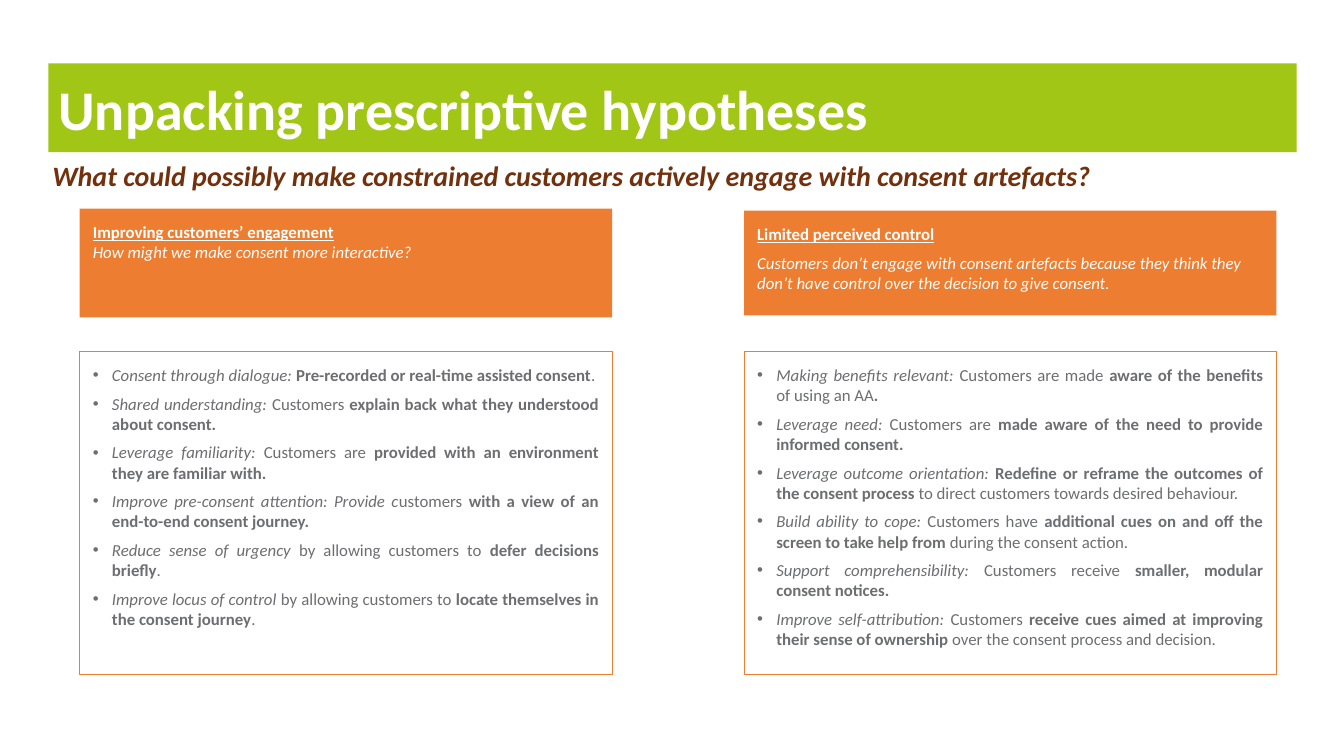
import pptx
import pptx.dml.color
import pptx.enum.text
import pptx.oxml
import pptx.oxml.ns
import pptx.util

COLORS = {"green": "A2C616", "orange": "ED7D31", "grey": "6D6E71", "brown": "72310C", "white": "FFFFFF"}
FONT = "Calibri"
WIDTH, HEIGHT = pptx.util.Inches(13.33), pptx.util.Inches(7.5)
COLUMNS = (5.93, 55.36)
COLUMN_WIDTH = 39.61
ALIGN = pptx.enum.text.PP_ALIGN
ANCHOR = pptx.enum.text.MSO_ANCHOR

ENGAGEMENT = [
    [("Consent through dialogue: ", "i"), ("Pre-recorded or real-time assisted consent", "b"), (".", "")],
    [("Shared understanding: ", "i"), ("Customers ", ""),
     ("explain back what they understood about consent.", "b")],
    [("Leverage familiarity: ", "i"), ("Customers are ", ""),
     ("provided with an environment they are familiar with.", "b")],
    [("Improve pre-consent attention: Provide c", "i"), ("ustomers ", ""),
     ("with a view of an end-to-end consent journey.", "b")],
    [("Reduce sense of urgency ", "i"), ("by allowing customers to ", ""),
     ("defer decisions briefly", "b"), (".", "")],
    [("Improve locus of control ", "i"), ("by allowing customers to ", ""),
     ("locate themselves in the consent journey", "b"), (".", "")],
]
CONTROL = [
    [("Making benefits relevant: ", "i"), ("Customers are made ", ""), ("aware of the benefits", "b"),
     (" of using an AA", ""), (".", "bi")],
    [("Leverage need: ", "i"), ("Customers are ", ""),
     ("made aware of the need to provide informed consent.", "b")],
    [("Leverage outcome orientation: ", "i"),
     ("Redefine or reframe the outcomes of the consent process", "b"),
     (" to direct customers towards desired behaviour.", "")],
    [("Build ability to cope: ", "i"), ("Customers have ", ""),
     ("additional cues on and off the screen to take help from", "b"),
     (" during the consent action.", "")],
    [("Support comprehensibility: ", "i"), ("Customers receive ", ""),
     ("smaller, modular consent notices.", "b")],
    [("Improve self-attribution: ", "i"), ("Customers ", ""),
     ("receive cues aimed at improving their sense of ownership", "b"),
     (" over the consent process and decision.", "")],
]
ENGAGEMENT_HEAD = [
    [("Improving customers’ engagement", "bu")],
    [("How might we make consent more interactive?", "i")],
]
CONTROL_HEAD = [
    [("Limited perceived control", "bu")],
    [("Customers don’t engage with consent artefacts because they think they "
      "don’t have control over the decision to give consent.", "i")],
]


def rgb(name):
    """Return the named palette colour."""
    return pptx.dml.color.RGBColor.from_string(COLORS[name])


def area(left, top, width, height):
    """Turn percentages of the slide into lengths."""
    return [int(side * share / 100) for side, share in
            ((WIDTH, left), (HEIGHT, top), (WIDTH, width), (HEIGHT, height))]


def place(sp, box, fill=None, line=None):
    """Position a placeholder and set its fill and outline."""
    sp.left, sp.top, sp.width, sp.height = area(*box)
    if fill:
        sp.fill.solid()
        sp.fill.fore_color.rgb = rgb(fill)
    if line:
        sp.line.color.rgb = rgb(line)
        sp.line.width = pptx.util.Pt(0.75)


def add_bullet(p):
    """Give a paragraph a hanging grey bullet."""
    pPr = p._p.get_or_add_pPr()
    pPr.set("marL", str(pptx.util.Inches(0.19)))
    pPr.set("indent", str(-pptx.util.Inches(0.19)))
    ns = pptx.oxml.ns.nsdecls("a")
    for xml in (f'<a:buClr {ns}><a:srgbClr val="{COLORS["grey"]}"/></a:buClr>',
                f'<a:buFont {ns} typeface="Arial"/>', f'<a:buChar {ns} char="•"/>'):
        pPr.append(pptx.oxml.parse_xml(xml))


def write(sp, paragraphs, size, color, inset=0.1, align=ALIGN.LEFT, anchor=ANCHOR.TOP,
          after=0, spacing=1.0, bullets=False):
    """Fill a shape with styled paragraphs, run by run."""
    tf = sp.text_frame
    tf.word_wrap = True
    tf.auto_size = pptx.enum.text.MSO_AUTO_SIZE.NONE
    tf.vertical_anchor = anchor
    tf.margin_left = tf.margin_right = tf.margin_top = tf.margin_bottom = pptx.util.Inches(inset)
    for i, runs in enumerate(paragraphs):
        p = tf.add_paragraph() if i else tf.paragraphs[0]
        if bullets:
            add_bullet(p)
        p.alignment = align
        p.line_spacing = spacing
        p.space_before = pptx.util.Pt(0)
        p.space_after = pptx.util.Pt(after)
        for text, style in runs:
            r = p.add_run()
            r.text = text
            r.font.name = FONT
            r.font.size = pptx.util.Pt(size)
            r.font.color.rgb = rgb(color)
            r.font.bold = "b" in style
            r.font.italic = "i" in style
            r.font.underline = "u" in style


def add_title(s):
    """Format the title as a green banner."""
    place(s.shapes.title, (3.6, 8.4, 92.87, 11.73), fill="green")
    write(s.shapes.title, [[("Unpacking prescriptive hypotheses", "b")]], 40, "white",
          anchor=ANCHOR.MIDDLE)


def add_question(s):
    """Add the guiding question under the banner."""
    sp = s.shapes.add_textbox(*area(3.15, 20.53, 92.2, 6.27))
    text = "What could possibly make constrained customers actively engage with consent artefacts?"
    write(sp, [[(text, "bi")]], 20, "brown", spacing=0.8)


def add_heading(sp, left, top, height, paragraphs, align, after):
    """Format a column heading as an orange block."""
    place(sp, (left, top, COLUMN_WIDTH, height), fill="orange")
    write(sp, paragraphs, 12, "white", inset=0.13, align=align, after=after)


def add_list(sp, left, items):
    """Format a column body as an outlined bullet list."""
    place(sp, (left, 46.53, COLUMN_WIDTH, 42.67), line="orange")
    write(sp, items, 12, "grey", inset=0.13, align=ALIGN.JUSTIFY, after=6, bullets=True)


def main():
    """Build and save the slide."""
    prs = pptx.Presentation()
    prs.slide_width, prs.slide_height = WIDTH, HEIGHT
    s = prs.slides.add_slide(prs.slide_layouts.get_by_name("Comparison"))
    left_head, left_list, right_head, right_list = list(s.placeholders)[1:5]
    add_title(s)
    add_heading(left_head, COLUMNS[0], 27.6, 14.4, ENGAGEMENT_HEAD, ALIGN.JUSTIFY, 0)
    add_heading(right_head, COLUMNS[1], 27.87, 13.87, CONTROL_HEAD, ALIGN.LEFT, 6)
    add_list(left_list, COLUMNS[0], ENGAGEMENT)
    add_list(right_list, COLUMNS[1], CONTROL)
    add_question(s)
    prs.save("out.pptx")


if __name__ == "__main__":
    main()
